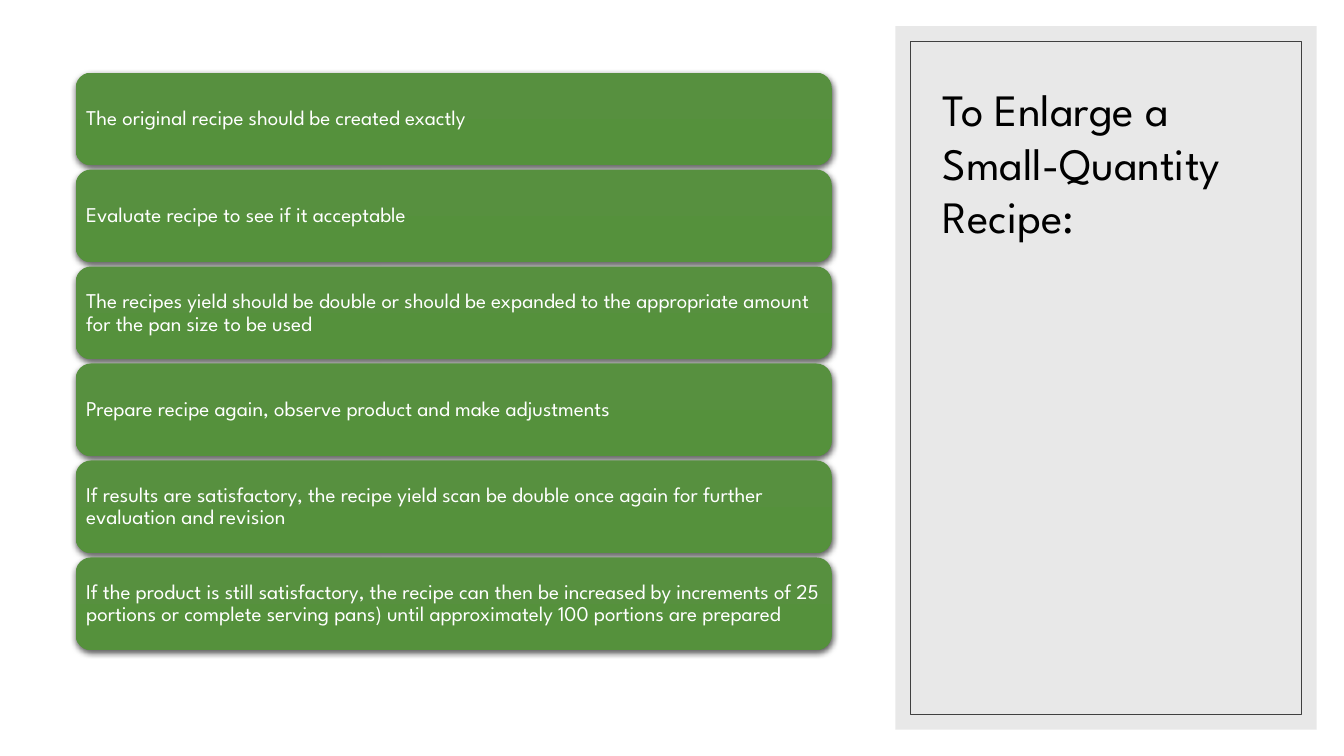
from pptx import Presentation
from pptx.dml.color import RGBColor
from pptx.enum.shapes import MSO_SHAPE
from pptx.enum.text import MSO_ANCHOR, MSO_AUTO_SIZE, PP_ALIGN
from pptx.oxml import parse_xml
from pptx.oxml.ns import nsdecls, qn
from pptx.util import Inches, Pt

COLORS = {
    "panel": "D9D9D9",
    "frame": "404040",
    "title": "000000",
    "card_top": "57903F",
    "card_bottom": "55913C",
    "card_text": "FFFFFF",
    "shadow": "000000",
}
FONT = "League Spartan"
TITLE = "To Enlarge a Small-Quantity Recipe:"
STEPS = [
    "The original recipe should be created exactly",
    "Evaluate recipe to see if it acceptable",
    "The recipes yield should be double or should be expanded to the appropriate amount for the pan size to be used",
    "Prepare recipe again, observe product and make adjustments",
    "If results are satisfactory, the recipe yield scan be double once again for further evaluation and revision",
    "If the product is still satisfactory, the recipe can then be increased by increments of 25 portions or complete serving pans) until approximately 100 portions are prepared",
]


def color(name):
    return RGBColor.from_string(COLORS[name])


def add_box(slide, kind, left, top, width, height):
    shape = slide.shapes.add_shape(
        kind, Inches(left), Inches(top), Inches(width), Inches(height)
    )
    shape.shadow.inherit = False
    return shape


def write_text(shape, text, size, color_name, line_spacing):
    shape.text_frame.text = text
    paragraph = shape.text_frame.paragraphs[0]
    paragraph.alignment = PP_ALIGN.LEFT
    paragraph.line_spacing = line_spacing
    font = paragraph.runs[0].font
    font.name = FONT
    font.size = Pt(size)
    font.color.rgb = color(color_name)


def add_title_panel(slide, left, top, width, height):
    panel = add_box(slide, MSO_SHAPE.RECTANGLE, left, top, width, height)
    panel.fill.solid()
    panel.fill.fore_color.rgb = color("panel")
    panel.line.fill.background()
    panel_color = panel.element.spPr.find(qn("a:solidFill"))[0]
    panel_color.append(parse_xml(f'<a:alpha {nsdecls("a")} val="60000"/>'))

    margin = 0.15
    frame = add_box(
        slide, MSO_SHAPE.RECTANGLE,
        left + margin, top + margin, width - 2 * margin, height - 2 * margin,
    )
    frame.fill.background()
    frame.line.color.rgb = color("frame")
    frame.line.width = Pt(0.5)

    title = slide.shapes.title
    title.left, title.top = Inches(left + 0.37), Inches(top + 0.4)
    title.width, title.height = Inches(width - 0.72), Inches(1.8)
    title.text_frame.word_wrap = True
    title.text_frame.auto_size = MSO_AUTO_SIZE.NONE
    title.text_frame.vertical_anchor = MSO_ANCHOR.BOTTOM
    write_text(title, TITLE, 32, "title", 1.0)
    for shape in (panel, frame):
        title.element.addprevious(shape.element)


def add_card(slide, text, left, top, width, height):
    card = add_box(slide, MSO_SHAPE.ROUNDED_RECTANGLE, left, top, width, height)
    card.fill.gradient()
    card.fill.gradient_angle = 270
    for stop, name in zip(card.fill.gradient_stops, ("card_top", "card_bottom")):
        stop.color.rgb = color(name)
    card.line.fill.background()
    card.element.spPr.find(qn("a:effectLst")).append(parse_xml(
        f'<a:outerShdw {nsdecls("a")} blurRad="{Pt(4.5)}" dist="{Pt(1.5)}" '
        f'dir="5400000" algn="ctr" rotWithShape="0">'
        f'<a:srgbClr val="{COLORS["shadow"]}"><a:alpha val="63000"/></a:srgbClr>'
        f'</a:outerShdw>'
    ))

    frame = card.text_frame
    frame.word_wrap = True
    frame.vertical_anchor = MSO_ANCHOR.MIDDLE
    frame.margin_left = frame.margin_right = Inches(0.06)
    frame.margin_top = frame.margin_bottom = Inches(0.06)
    write_text(card, text, 15, "card_text", 0.9)


def add_steps(slide, left, top, width, height):
    card_height = 0.92
    pitch = (height - card_height) / (len(STEPS) - 1)
    for index, text in enumerate(STEPS):
        add_card(slide, text, left, top + index * pitch, width, card_height)


def main():
    presentation = Presentation()
    presentation.slide_width = Inches(13.33)
    presentation.slide_height = Inches(7.5)
    slide = presentation.slides.add_slide(presentation.slide_layouts[5])
    add_title_panel(slide, 8.88, 0.26, 4.18, 6.98)
    add_steps(slide, 0.75, 0.72, 7.5, 5.73)
    presentation.save("out.pptx")


if __name__ == "__main__":
    main()
